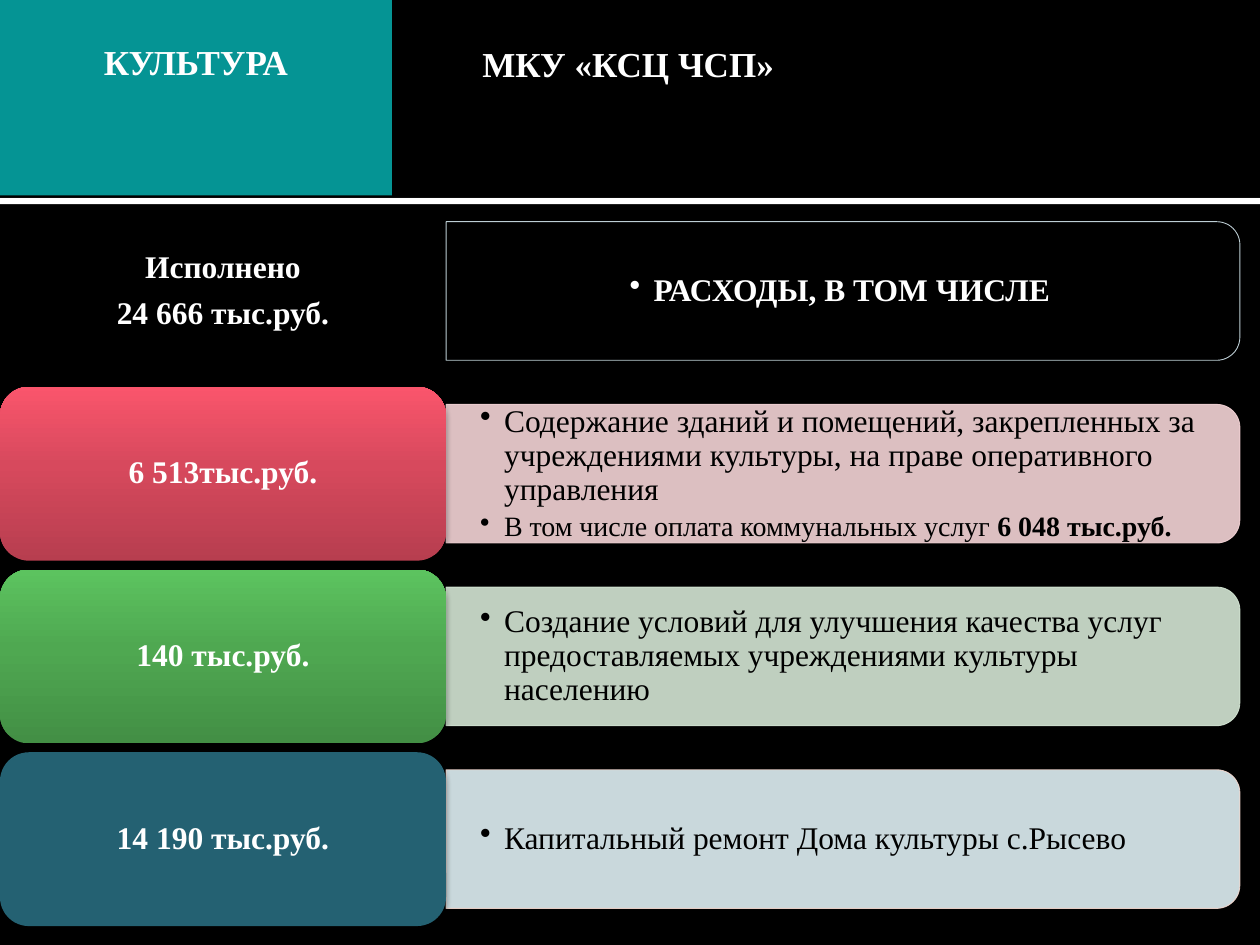
"""Build the slide on culture spending with one row per expense item."""
from copy import deepcopy

from lxml import etree
from pptx import Presentation
from pptx.dml.color import RGBColor
from pptx.enum import shapes, text
from pptx.oxml.ns import qn
from pptx.util import Inches, Pt

THEME = {
    "font": "Times New Roman", "title": 20, "body": 18, "detail": 16,
    "black": "000000", "white": "FFFFFF", "teal": "059494",
}
SECTION = "КУЛЬТУРА"
INSTITUTION = "МКУ «КСЦ ЧСП»"
# Each paragraph is a list of (wording, size, bold) spans.
ROWS = [
    {"label": ["Исполнено", "24 666 тыс.руб."], "label_fill": [],
     "panel_fill": None, "panel_line": "D2E5EC", "ink": "white", "centred": True,
     "items": [[("РАСХОДЫ, В ТОМ ЧИСЛЕ", "body", True)]]},
    {"label": ["6 513тыс.руб."], "label_fill": ["B73E4F", "D7495D", "FA556C"],
     "panel_fill": "F5D4D7", "panel_line": "F5D4D7", "ink": "black", "centred": False,
     "items": [[("Содержание зданий и помещений, закрепленных за учреждениями культуры, "
                 "на праве оперативного управления", "body", False)],
               [("В том числе оплата коммунальных услуг ", "detail", False),
                ("6 048 тыс.руб.", "detail", True)]]},
    {"label": ["140 тыс.руб."], "label_fill": ["438F45", "4FA851", "5CC35F"],
     "panel_fill": "D4E6D4", "panel_line": "D4E6D4", "ink": "black", "centred": False,
     "items": [[("Создание условий для улучшения качества услуг предоставляемых "
                 "учреждениями культуры населению", "body", False)]]},
    {"label": ["14 190 тыс.руб."], "label_fill": ["246172"],
     "panel_fill": "DFF0F5", "panel_line": "F6D9D0", "ink": "black", "centred": False,
     "items": [[("Капитальный ремонт Дома культуры с.Рысево", "body", False)]]},
]
ROW_TOP, ROW_PITCH = 1.62, 1.45
LABEL_WIDTH, LABEL_HEIGHT = 3.54, 1.38
PANEL_WIDTH, PANEL_HEIGHT = 6.3, 1.1
TEXT_WIDTH, TEXT_HEIGHT = 6.25, 0.99
CENTRE = text.PP_ALIGN.CENTER


def colour(value):
    return RGBColor.from_string(value)


def add_block(page, kind, place, fill=None):
    block = page.shapes.add_shape(kind, *map(Inches, place))
    block.shadow.inherit = False
    block.line.fill.background()
    if fill:
        block.fill.solid()
        block.fill.fore_color.rgb = colour(fill)
    else:
        block.fill.background()
    return block


def add_shadow(block, blur, distance, opacity):
    effects = block._element.spPr.find(qn("a:effectLst"))
    shadow = etree.SubElement(effects, qn("a:outerShdw"), blurRad=str(Pt(blur)),
                              dist=str(Pt(distance)), dir="5400000", rotWithShape="0")
    ink = etree.SubElement(shadow, qn("a:srgbClr"), val=THEME["black"])
    etree.SubElement(ink, qn("a:alpha"), val=str(opacity * 1000))


def add_gradient(block, colours):
    block.fill.gradient()
    block.fill.gradient_angle = 90
    stops = block._element.spPr.find(".//" + qn("a:gsLst"))
    stops.insert(1, deepcopy(stops[0]))
    for stop, value, position in zip(block.fill.gradient_stops, colours, (0, 0.55, 1)):
        stop.color.rgb = colour(value)
        stop.position = position


def set_insets(frame, across, down):
    frame.margin_left = frame.margin_right = Inches(across)
    frame.margin_top = frame.margin_bottom = Inches(down)


def style_span(span, size, ink, bold):
    span.font.name = THEME["font"]
    span.font.size = Pt(THEME[size])
    span.font.color.rgb = colour(THEME[ink])
    span.font.bold = bold


def write_lines(frame, lines, size):
    frame.text = "\n".join(lines)
    for para in frame.paragraphs:
        para.alignment = CENTRE
        for span in para.runs:
            style_span(span, size, "white", True)


def add_panel(page, row, middle):
    left = LABEL_WIDTH + (PANEL_WIDTH - PANEL_HEIGHT) / 2
    place = (left, middle - PANEL_WIDTH / 2, PANEL_HEIGHT, PANEL_WIDTH)
    panel = add_block(page, shapes.MSO_SHAPE.ROUND_2_SAME_RECTANGLE, place, row["panel_fill"])
    panel.rotation = 90
    panel.line.color.rgb = colour(row["panel_line"])
    panel.line.width = Pt(0.5)
    for ink in panel._element.spPr.iter(qn("a:srgbClr")):
        etree.SubElement(ink, qn("a:alpha"), val="90000")


def add_items(page, row, middle):
    place = (LABEL_WIDTH, middle - TEXT_HEIGHT / 2, TEXT_WIDTH, TEXT_HEIGHT)
    frame = page.shapes.add_textbox(*map(Inches, place)).text_frame
    frame.word_wrap = True
    frame.vertical_anchor = text.MSO_ANCHOR.MIDDLE
    set_insets(frame, 0.27, 0.14)
    for number, spans in enumerate(row["items"]):
        para = frame.add_paragraph() if number else frame.paragraphs[0]
        para.alignment = CENTRE if row["centred"] else text.PP_ALIGN.LEFT
        para.line_spacing = 0.9
        para.space_after = Pt(3)
        properties = para._p.get_or_add_pPr()
        properties.set("marL", str(Inches(0.19)))
        properties.set("indent", str(Inches(-0.19)))
        etree.SubElement(properties, qn("a:buChar"), char="•")
        for wording, size, bold in spans:
            span = para.add_run()
            span.text = wording
            style_span(span, size, row["ink"], bold)


def add_label(page, row, top):
    place = (0, top, LABEL_WIDTH, LABEL_HEIGHT)
    fills = row["label_fill"]
    if fills:
        label = add_block(page, shapes.MSO_SHAPE.ROUNDED_RECTANGLE, place, fills[0])
        add_shadow(label, 3.1, 2, 38)
        if len(fills) > 1:
            add_gradient(label, fills)
    else:
        label = page.shapes.add_textbox(*map(Inches, place))
    frame = label.text_frame
    frame.word_wrap = True
    frame.vertical_anchor = text.MSO_ANCHOR.MIDDLE
    set_insets(frame, 0.07, 0.04)
    write_lines(frame, row["label"], "body")
    for para in frame.paragraphs:
        para.line_spacing = 0.9
        para.space_after = Pt(7)


def add_header(page):
    rectangle = shapes.MSO_SHAPE.RECTANGLE
    rule = add_block(page, rectangle, (0, 1.57, 10, 0.05), THEME["white"])
    add_shadow(rule, 2.5, 0.8, 60)
    add_block(page, rectangle, (0, 0, 10, 1.57), THEME["black"])
    section = add_block(page, rectangle, (0, 0, 3.11, 1.55), THEME["teal"]).text_frame
    set_insets(section, 0, 0)
    section.margin_top = Inches(0.32)
    section.vertical_anchor = text.MSO_ANCHOR.TOP
    write_lines(section, [SECTION], "title")
    title = page.shapes.add_textbox(*map(Inches, (3.71, 0.29, 2.55, 0.44))).text_frame
    title.word_wrap = False
    write_lines(title, [INSTITUTION], "title")


def main():
    deck = Presentation()
    deck.slide_width, deck.slide_height = Inches(10), Inches(7.5)
    page = deck.slides.add_slide(deck.slide_layouts[6])
    page.background.fill.solid()
    page.background.fill.fore_color.rgb = colour(THEME["black"])
    add_header(page)
    for number, row in enumerate(ROWS):
        top = ROW_TOP + number * ROW_PITCH
        middle = top + LABEL_HEIGHT / 2
        add_panel(page, row, middle)
        add_items(page, row, middle)
        add_label(page, row, top)
    deck.save("out.pptx")


if __name__ == "__main__":
    main()
